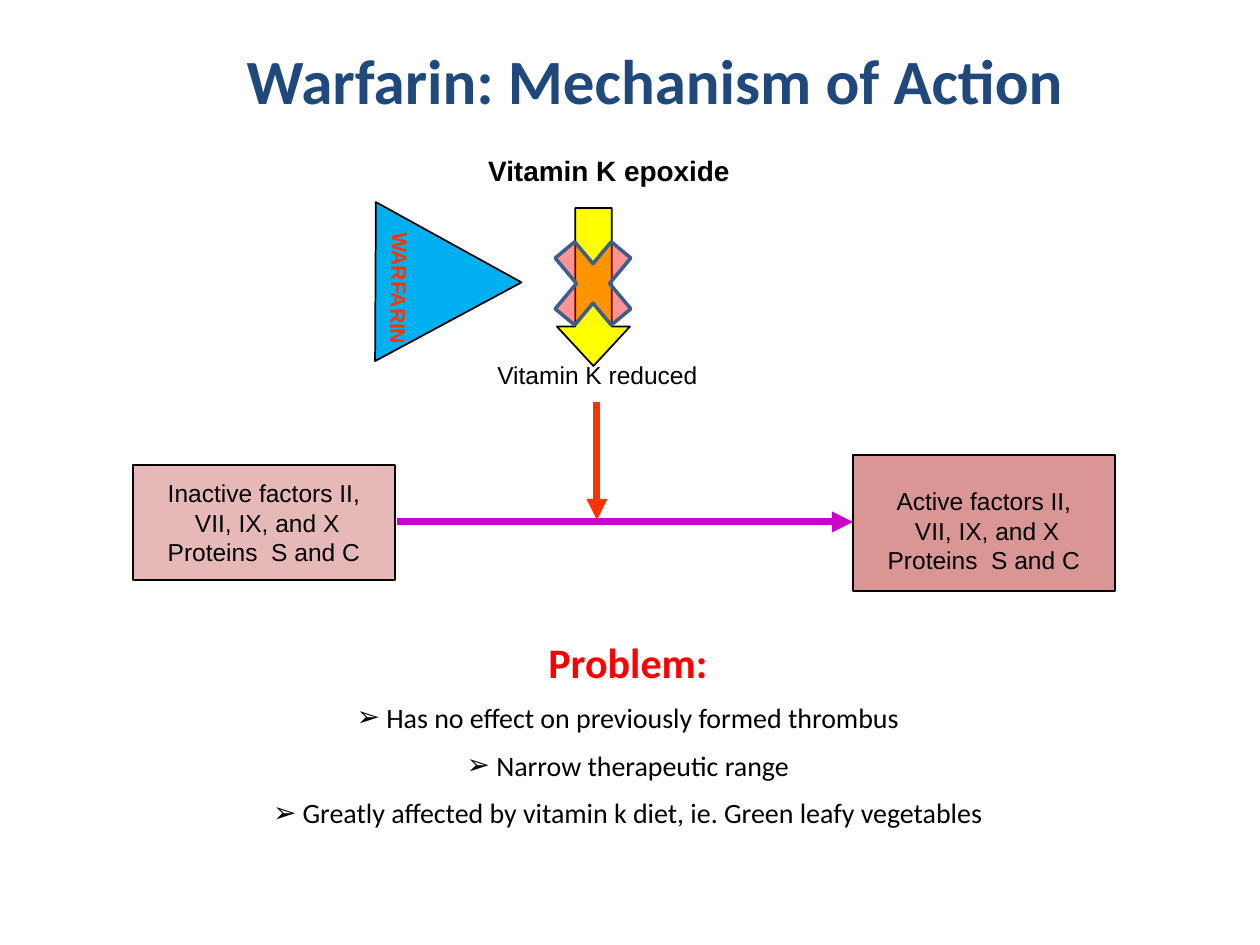
from lxml.etree import SubElement
from pptx import Presentation
from pptx.dml.color import RGBColor
from pptx.enum.shapes import MSO_CONNECTOR as Connector, MSO_SHAPE as Shape
from pptx.enum.text import MSO_ANCHOR as Anchor, PP_ALIGN as Align
from pptx.oxml.ns import qn
from pptx.util import Emu, Pt

EMU_PER_PX = 914400 / 126


def px(length):
    return Emu(round(length * EMU_PER_PX))


def color(hex_code):
    return RGBColor.from_string(hex_code)


class SlideBuilder:
    BLACK = "000000"
    BODY = "Arial"
    HEADING = "Calibri"

    def __init__(self, slide):
        self.slide = slide

    def shape(self, kind, box, fill, line=BLACK, line_width=1, alpha=None, rotation=0, adjustments=()):
        figure = self.slide.shapes.add_shape(kind, *map(px, box))
        figure.shadow.inherit = False
        figure.rotation = rotation
        for index, value in enumerate(adjustments):
            figure.adjustments[index] = value
        figure.fill.solid()
        figure.fill.fore_color.rgb = color(fill)
        figure.line.color.rgb = color(line)
        figure.line.width = Pt(line_width)
        if alpha is not None:
            tint = figure.fill._xPr.find(qn("a:solidFill"))[0]
            SubElement(tint, qn("a:alpha"), val=str(alpha * 1000))
        return figure

    def text(self, box, anchor=Anchor.TOP, rotation=0):
        label = self.slide.shapes.add_textbox(*map(px, box))
        label.rotation = rotation
        frame = label.text_frame
        frame.word_wrap = True
        frame.vertical_anchor = anchor
        return frame

    def paragraph(self, frame, words, size, font=BODY, ink=BLACK, bold=False,
                  align=Align.CENTER, before=0, bullet=None):
        line = frame.paragraphs[0]
        if line.runs:
            line = frame.add_paragraph()
        line.alignment = align
        line.space_before = Pt(before)
        if bullet:
            properties = line._p.get_or_add_pPr()
            properties.set("marL", "0")
            properties.set("indent", "0")
            bullet_color = SubElement(properties, qn("a:buClr"))
            SubElement(bullet_color, qn("a:srgbClr"), val=self.BLACK)
            SubElement(properties, qn("a:buFont"), typeface=self.BODY)
            SubElement(properties, qn("a:buChar"), char=bullet)
        run = line.add_run()
        run.text = words
        run.font.name = font
        run.font.size = Pt(size)
        run.font.bold = bold
        run.font.color.rgb = color(ink)

    def factor_box(self, box, fill, lines, top_inset):
        frame = self.shape(Shape.RECTANGLE, box, fill).text_frame
        frame.word_wrap = False
        frame.vertical_anchor = Anchor.MIDDLE
        frame.margin_top = px(top_inset)
        for words in lines:
            self.paragraph(frame, words, 14)

    def arrow(self, start, end, ink):
        arrow = self.slide.shapes.add_connector(Connector.STRAIGHT, *map(px, start + end))
        arrow.line.color.rgb = color(ink)
        arrow.line.width = Pt(4)
        SubElement(arrow.line._get_or_add_ln(), qn("a:tailEnd"), type="triangle")
        SubElement(arrow._element.spPr, qn("a:effectLst"))


def main():
    deck = Presentation()
    deck.slide_width, deck.slide_height = px(1260), px(945)
    page = SlideBuilder(deck.slides.add_slide(deck.slide_layouts[6]))

    factors = [" VII, IX, and X", "Proteins  S and C"]
    page.factor_box((133, 465, 262, 115), "E6B9B8", ["Inactive factors II,"] + factors, 6)
    page.factor_box((853, 455, 262, 136), "D99694", ["Active factors II,"] + factors, 21)

    epoxide = page.text((420, 147, 378, 47))
    page.paragraph(epoxide, "Vitamin K epoxide", 16, bold=True)
    reduced = page.text((382, 354, 431, 50))
    page.paragraph(reduced, "Vitamin K reduced", 14)

    page.shape(Shape.DOWN_ARROW, (557, 208, 73, 158), "FFFF00", adjustments=(0.5, 0.54))
    page.arrow((397, 522), (853, 522), "CC00CC")
    page.arrow((597, 402), (597, 520), "FF3300")

    page.shape(Shape.ISOSCELES_TRIANGLE, (369, 209, 159, 146), "00B0F0", rotation=90.3)
    warfarin = page.text((315, 285, 168, 38), rotation=91.3)
    page.paragraph(warfarin, "WARFARIN", 12, ink="FF3300", bold=True, align=Align.LEFT)

    problem = page.text((66, 630, 1124, 217))
    page.paragraph(problem, "Problem:", 24, page.HEADING, "FF0000", bold=True)
    for drawback in (
        " Has no effect on previously formed thrombus",
        " Narrow therapeutic range",
        " Greatly affected by vitamin k diet, ie. Green leafy vegetables",
    ):
        page.paragraph(problem, drawback, 16, page.HEADING, before=8, bullet="➢")

    page.shape(Shape.MATH_MULTIPLY, (539, 219, 108, 129), "FF0000", "3A5F8C", 2, alpha=42)

    title = page.text((88, 0, 1134, 158), Anchor.MIDDLE)
    page.paragraph(title, "Warfarin: Mechanism of Action", 36, page.HEADING, "1F497D", bold=True)

    deck.save("out.pptx")


if __name__ == "__main__":
    main()
